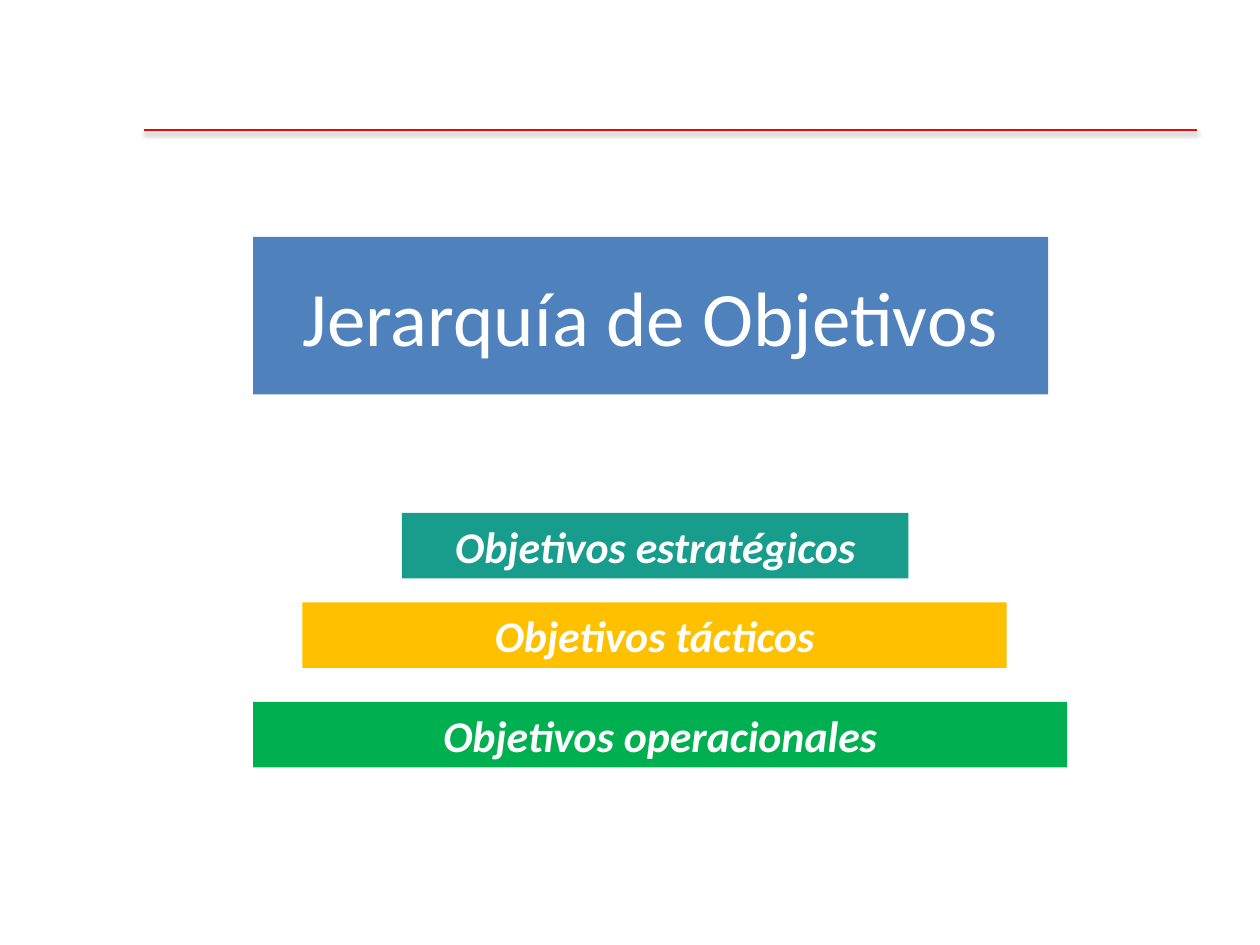
from dataclasses import dataclass

from lxml import etree
from pptx import Presentation, util as u
from pptx.dml.color import RGBColor
from pptx.enum import shapes, text
from pptx.oxml import ns


@dataclass(frozen=True)
class Theme:
    font: str = "Calibri"
    title_size: int = 44
    level_size: int = 25
    text: str = "FFFFFF"
    rule: str = "FF0000"
    shadow: str = "000000"
    title: str = "4F81BD"
    strategic: str = "189C8C"
    tactical: str = "FFC000"
    operational: str = "00B050"


theme = Theme()

prs = Presentation()
prs.slide_width, prs.slide_height = u.Inches(10), u.Inches(7.5)
s = prs.slides.add_slide(prs.slide_layouts[6])

# Grid: 100 columns by 75 rows
col = prs.slide_width / 100
row = prs.slide_height / 75


def add_bar(label, left, top, width, height, fill, size, bold=False):
    """Add a filled bar with one centred line of text."""
    sp = s.shapes.add_shape(shapes.MSO_SHAPE.RECTANGLE, round(left * col),
                            round(top * row), round(width * col), round(height * row))
    sp.shadow.inherit = False
    sp.fill.solid()
    sp.fill.fore_color.rgb = RGBColor.from_string(fill)
    sp.line.fill.background()
    tf = sp.text_frame
    tf.word_wrap = True
    tf.vertical_anchor = text.MSO_ANCHOR.MIDDLE
    p = tf.paragraphs[0]
    p.text = label
    p.alignment = text.PP_ALIGN.CENTER
    p.font.name, p.font.size = theme.font, u.Pt(size)
    p.font.bold = p.font.italic = bold
    p.font.color.rgb = RGBColor.from_string(theme.text)


# Header rule with a soft shadow below it
rule = s.shapes.add_connector(shapes.MSO_CONNECTOR.STRAIGHT, round(11.4 * col),
                              round(10.3 * row), round(95 * col), round(10.3 * row))
rule.line.color.rgb = RGBColor.from_string(theme.rule)
rule.line.width = u.Pt(1)
effects = etree.SubElement(rule.element.spPr, ns.qn("a:effectLst"))
shadow = etree.SubElement(effects, ns.qn("a:outerShdw"), blurRad=str(u.Pt(3.1)),
                          dist=str(u.Pt(1.6)), dir="5400000", rotWithShape="0")
colour = etree.SubElement(shadow, ns.qn("a:srgbClr"), val=theme.shadow)
etree.SubElement(colour, ns.qn("a:alpha"), val="38000")

# Title
add_bar("Jerarquía de Objetivos", 20.1, 18.8, 63.1, 12.5, theme.title, theme.title_size)

# Levels, widening towards the base
levels = [
    ("Objetivos estratégicos", 31.9, 40.7, 40.2, theme.strategic),
    ("Objetivos tácticos", 24, 47.8, 55.9, theme.tactical),
    ("Objetivos operacionales", 20.1, 55.7, 64.6, theme.operational),
]
for label, left, top, width, fill in levels:
    add_bar(label, left, top, width, 5.2, fill, theme.level_size, bold=True)

prs.save("out.pptx")
